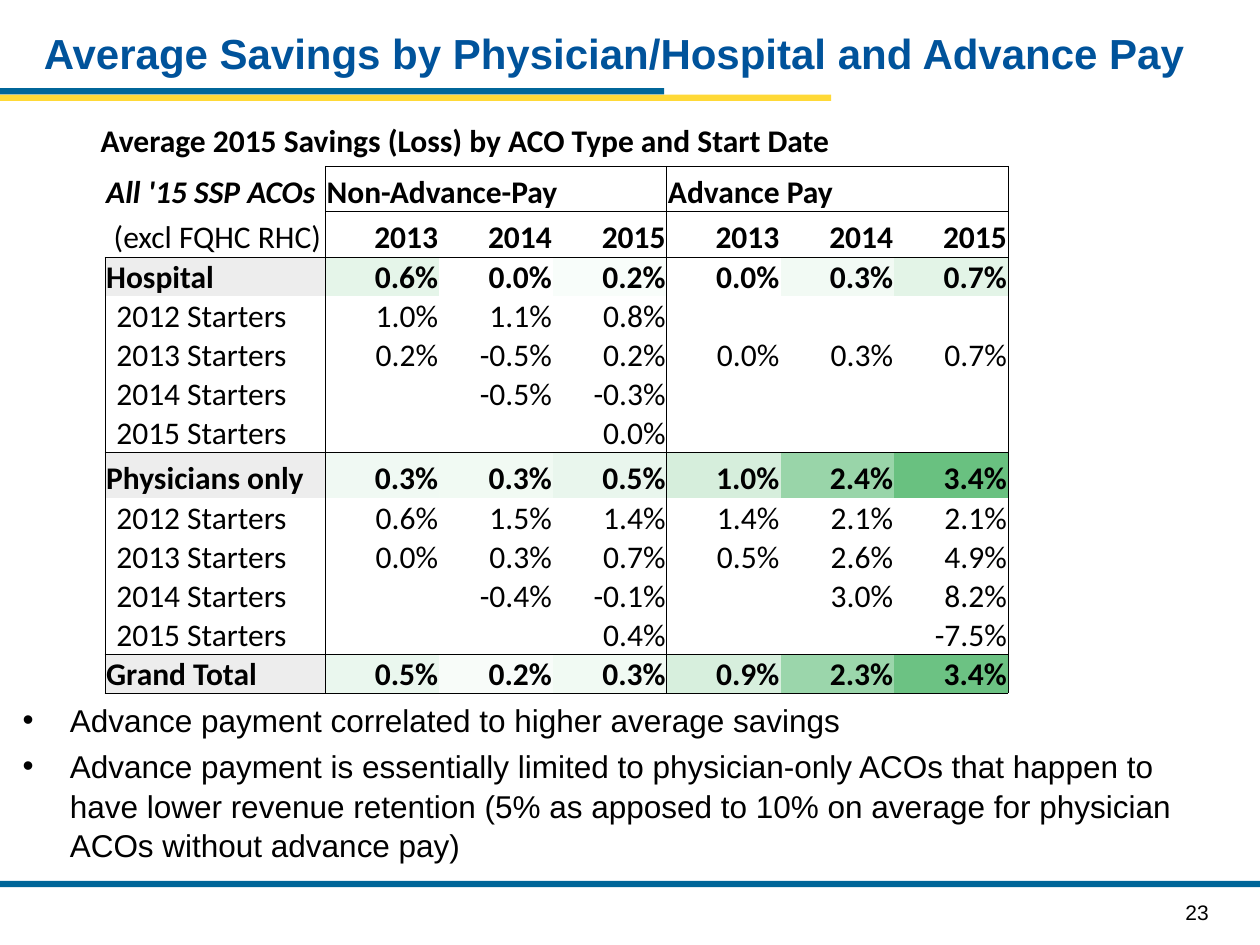
from lxml import etree
from pptx import Presentation
from pptx.dml.color import RGBColor
from pptx.enum.shapes import MSO_SHAPE
from pptx.enum.text import MSO_ANCHOR, PP_ALIGN
from pptx.oxml.ns import qn
from pptx.util import Pt

COLORS = {"title": "00539B", "blue": "006699", "yellow": "FFD937",
          "text": "000000", "label": "EDEDED", "plain": "FFFFFF"}

TITLE = "Average Savings by Physician/Hospital and Advance Pay"
CAPTION = "Average 2015 Savings (Loss) by ACO Type and Start Date"
PAGE_NUMBER = "23"
BULLETS = [
    "Advance payment correlated to higher average savings",
    "Advance payment is essentially limited to physician-only ACOs that happen to "
    "have lower revenue retention (5% as apposed to 10% on average for physician "
    "ACOs without advance pay)",
]
BARS = [
    ("yellow", 0, 54, 475, 3.6),
    ("blue", 0, 50.4, 379.5, 3.6),
    ("blue", 0, 503.3, 720, 3.6),
]
ROWS = [
    ["All '15 SSP ACOs", "Non-Advance-Pay", "", "", "Advance Pay", "", ""],
    ["(excl FQHC RHC)", "2013", "2014", "2015", "2013", "2014", "2015"],
    ["Hospital", "0.6%", "0.0%", "0.2%", "0.0%", "0.3%", "0.7%"],
    ["2012 Starters", "1.0%", "1.1%", "0.8%", "", "", ""],
    ["2013 Starters", "0.2%", "-0.5%", "0.2%", "0.0%", "0.3%", "0.7%"],
    ["2014 Starters", "", "-0.5%", "-0.3%", "", "", ""],
    ["2015 Starters", "", "", "0.0%", "", "", ""],
    ["Physicians only", "0.3%", "0.3%", "0.5%", "1.0%", "2.4%", "3.4%"],
    ["2012 Starters", "0.6%", "1.5%", "1.4%", "1.4%", "2.1%", "2.1%"],
    ["2013 Starters", "0.0%", "0.3%", "0.7%", "0.5%", "2.6%", "4.9%"],
    ["2014 Starters", "", "-0.4%", "-0.1%", "", "3.0%", "8.2%"],
    ["2015 Starters", "", "", "0.4%", "", "", "-7.5%"],
    ["Grand Total", "0.5%", "0.2%", "0.3%", "0.9%", "2.3%", "3.4%"],
]
HEAT = {
    2: ["E5F5E9", "FFFFFF", "F8FDFA", "FFFFFF", "F2FAF4", "E3F4E7"],
    7: ["F0F9F3", "F1FAF3", "E9F6ED", "D6EEDC", "99D5A9", "69C180"],
    12: ["EAF7EE", "F8FCF9", "F1FAF3", "D7EFDD", "9BD6AB", "6CC283"],
}
SPANS = {(0, 1): 3, (0, 4): 2}
TALL_ROWS = {0, 1, 7}
RULES_ABOVE = {0, 1, 2, 7, 12, 13}
RULES_BEFORE = {0, 1, 4, 7}


def write(paragraph, text, size=18, font="Arial", color="text",
          bold=False, italic=False, align=PP_ALIGN.LEFT):
    paragraph.alignment = align
    run = paragraph.add_run()
    run.text = text
    run.font.size = Pt(size)
    run.font.name = font
    run.font.bold = bold
    run.font.italic = italic
    run.font.color.rgb = RGBColor.from_string(COLORS[color])


def add_frame(slide, left, top, width, height, anchor=MSO_ANCHOR.TOP):
    frame = slide.shapes.add_textbox(Pt(left), Pt(top), Pt(width), Pt(height)).text_frame
    frame.word_wrap = True
    frame.vertical_anchor = anchor
    return frame


def add_bar(slide, color, left, top, width, height):
    bar = slide.shapes.add_shape(MSO_SHAPE.RECTANGLE, Pt(left), Pt(top), Pt(width), Pt(height))
    bar.shadow.inherit = False
    bar.fill.solid()
    bar.fill.fore_color.rgb = RGBColor.from_string(COLORS[color])
    bar.line.fill.background()


def add_bullets(frame):
    for number, bullet in enumerate(BULLETS):
        paragraph = frame.add_paragraph() if number else frame.paragraphs[0]
        properties = paragraph._p.get_or_add_pPr()
        properties.set("marL", str(Pt(27)))
        properties.set("indent", str(-Pt(27)))
        etree.SubElement(properties, qn("a:buFont")).set("typeface", "Arial")
        etree.SubElement(properties, qn("a:buChar")).set("char", "•")
        paragraph.line_spacing = 1.05
        if number:
            paragraph.space_before = Pt(3.6)
        write(paragraph, bullet)


def has_rule(side, row, column, span):
    if side in "TB":
        edge = row + (side == "B")
        return edge in RULES_ABOVE and (column > 0 or edge >= 2)
    edge = column + (span if side == "R" else 0)
    return edge in RULES_BEFORE and (edge > 0 or row >= 2)


def set_borders(cell, row, column, span):
    properties = cell._tc.get_or_add_tcPr()
    for position, side in enumerate("LRTB"):
        line = etree.Element(qn(f"a:ln{side}"), w=str(Pt(0.5)))
        if has_rule(side, row, column, span):
            fill = etree.SubElement(line, qn("a:solidFill"))
            etree.SubElement(fill, qn("a:srgbClr")).set("val", COLORS["text"])
        else:
            etree.SubElement(line, qn("a:noFill"))
        properties.insert(position, line)


def cell_fill(row, column):
    if row not in HEAT:
        return COLORS["plain"]
    return HEAT[row][column - 1] if column else COLORS["label"]


def left_margin(row, column):
    if column:
        return 0.7
    if row == 1:
        return 5
    return 6.5 if row > 1 and row not in HEAT else 0.7


def add_savings_table(slide):
    table = slide.shapes.add_table(len(ROWS), len(ROWS[0]), Pt(60), Pt(95),
                                   Pt(516), Pt(288)).table
    for number, column in enumerate(table.columns):
        column.width = Pt(65 if number else 126)
    for number, row in enumerate(table.rows):
        row.height = Pt(26 if number in TALL_ROWS else 21)
    for (row, column), span in SPANS.items():
        table.cell(row, column).merge(table.cell(row, column + span - 1))
    for row, entries in enumerate(ROWS):
        for column, entry in enumerate(entries):
            cell = table.cell(row, column)
            cell.margin_left = Pt(left_margin(row, column))
            cell.margin_top = cell.margin_right = Pt(0.7)
            cell.margin_bottom = 0
            cell.vertical_anchor = MSO_ANCHOR.BOTTOM
            cell.fill.solid()
            cell.fill.fore_color.rgb = RGBColor.from_string(cell_fill(row, column))
            set_borders(cell, row, column, SPANS.get((row, column), 1))
            if entry:
                write(cell.text_frame.paragraphs[0], entry, font="Calibri",
                      bold=row == 0 or row in HEAT or (row == 1 and column > 0),
                      italic=row == column == 0,
                      align=PP_ALIGN.RIGHT if row and column else PP_ALIGN.LEFT)


def main():
    presentation = Presentation()
    presentation.slide_width, presentation.slide_height = Pt(720), Pt(540)
    slide = presentation.slides.add_slide(presentation.slide_layouts[6])
    for bar in BARS:
        add_bar(slide, *bar)
    page = add_frame(slide, 670.3, 510.5, 35, 21.6)
    write(page.paragraphs[0], PAGE_NUMBER, size=12)
    title = add_frame(slide, 18, 9.4, 684, 41, MSO_ANCHOR.MIDDLE)
    write(title.paragraphs[0], TITLE, size=24, color="title", bold=True)
    add_bullets(add_frame(slide, 5.8, 396, 701, 96))
    add_savings_table(slide)
    caption = add_frame(slide, 50.4, 65.5, 612, 29)
    write(caption.paragraphs[0], CAPTION, font="Calibri", bold=True)
    presentation.save("out.pptx")


if __name__ == "__main__":
    main()
